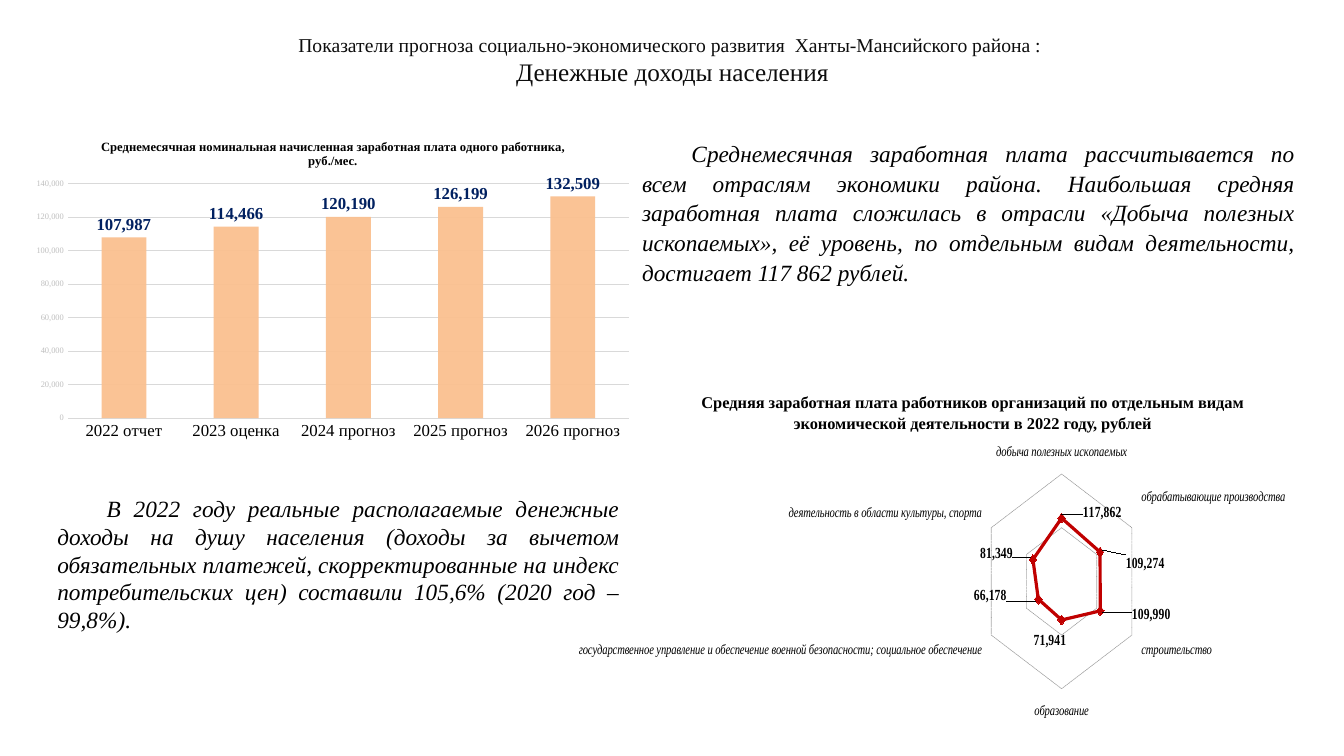
from lxml import etree
from pptx import Presentation
from pptx.chart.data import CategoryChartData
from pptx.dml.color import RGBColor
from pptx.enum import chart as ch, dml, text
from pptx.oxml import ns
from pptx.util import Inches, Pt

SERIF = "Times New Roman"
COLORS = {"black": "000000", "title": "0D0D0D", "bar": "FAC090", "radar": "C00000",
          "value": "002060", "scale": "BFBFBF", "grid": "D9D9D9", "ring": "7F7F7F"}
WAGES = {"2022 отчет": 107987, "2023 оценка": 114466, "2024 прогноз": 120190,
         "2025 прогноз": 126199, "2026 прогноз": 132509}
INDUSTRIES = {
    "добыча полезных ископаемых": 117862,
    "обрабатывающие производства\n": 109274,
    "строительство": 109990,
    "образование": 71941,
    "государственное управление и обеспечение военной безопасности; "
    "социальное обеспечение": 66178,
    "деятельность в области культуры, спорта": 81349}
LABEL_SHIFTS = [(0.07, 0.03), (0.04, 0.06), (0.05, -0.02),
                (-0.02, 0.01), (-0.05, -0.04), (-0.03, 0.01)]


def rgb(name):
    """Return the palette colour called name."""
    return RGBColor.from_string(COLORS[name])


def set_font(font, size, color="black", bold=False, italic=False, name=SERIF):
    """Format a font of a run or a chart part."""
    font.size, font.name, font.bold, font.italic = Pt(size), name, bold, italic
    font.color.rgb = rgb(color)


def add_text(slide, words, box, size, align, indent=0, spacing=1.0, **style):
    """Add a wrapped one-paragraph text box."""
    frame = slide.shapes.add_textbox(*map(Inches, box)).text_frame
    frame.word_wrap = True
    frame.auto_size = text.MSO_AUTO_SIZE.SHAPE_TO_FIT_TEXT
    paragraph = frame.paragraphs[0]
    paragraph.alignment, paragraph.line_spacing = align, spacing
    if indent:
        paragraph._p.get_or_add_pPr().set("indent", str(Inches(indent)))
    run = paragraph.add_run()
    run.text = words
    set_font(run.font, size, **style)


def fill_title(slide):
    """Place the title and write its two lines."""
    title = slide.shapes.title
    title.left, title.top, title.width, title.height = map(Inches, (0.16, 0.29, 13.02, 0.6))
    frame = title.text_frame
    frame.word_wrap = True
    frame.auto_size = text.MSO_AUTO_SIZE.NONE
    frame.vertical_anchor = text.MSO_ANCHOR.MIDDLE
    heading = frame.paragraphs[0]
    heading.alignment = text.PP_ALIGN.CENTER
    heading.line_spacing = 1.0
    topic = heading.add_run()
    topic.text = "Показатели прогноза социально-экономического развития  Ханты-Мансийского района : "
    heading.add_line_break()
    subject = heading.add_run()
    subject.text = "Денежные доходы населения"
    set_font(topic.font, 14, "title")
    set_font(subject.font, 18, "title")


def add_values_chart(slide, kind, box, values, label_size, label_color):
    """Add a one-series chart with bold value labels."""
    data = CategoryChartData(number_format="#,##0")
    data.categories = list(values)
    data.add_series("Series 1", list(values.values()))
    chart = slide.shapes.add_chart(kind, *map(Inches, box), data).chart
    set_font(chart.font, 10, name="Calibri")
    chart.has_legend = chart.has_title = False
    plot = chart.plots[0]
    plot.vary_by_categories = False
    labels = plot.series[0].data_labels
    labels.show_value = True
    labels.number_format, labels.number_format_is_linked = "#,##0", False
    set_font(labels.font, label_size, label_color, bold=True)
    return chart


def manual_layout(**settings):
    """Build a manual chart layout element."""
    layout = etree.Element(ns.qn("c:layout"))
    manual = etree.SubElement(layout, ns.qn("c:manualLayout"))
    for key, value in settings.items():
        etree.SubElement(manual, ns.qn("c:" + key)).set("val", str(value))
    return layout


def add_wage_columns(slide):
    """Draw the monthly wage forecast."""
    chart = add_values_chart(slide, ch.XL_CHART_TYPE.COLUMN_CLUSTERED,
                             (0.24, 1.23, 6.12, 3.2), WAGES, 12, "value")
    chart.has_title = True
    caption = chart.chart_title.text_frame.paragraphs[0].add_run()
    caption.text = ("Среднемесячная номинальная начисленная заработная плата "
                    "одного работника, руб./мес.")
    set_font(caption.font, 9, bold=True)
    plot = chart.plots[0]
    plot.gap_width = 150
    plot.series[0].data_labels.position = ch.XL_LABEL_POSITION.OUTSIDE_END
    fill = plot.series[0].format.fill
    fill.solid()
    fill.fore_color.rgb = rgb("bar")
    for color in plot.series[0]._element.xpath("./c:spPr/a:solidFill/a:srgbClr"):
        etree.SubElement(color, ns.qn("a:alpha")).set("val", "95000")
    years, scale = chart.category_axis, chart.value_axis
    for axis, size, color in ((years, 12, "black"), (scale, 6, "scale")):
        axis.major_tick_mark = axis.minor_tick_mark = ch.XL_TICK_MARK.NONE
        axis.format.line.fill.background()
        set_font(axis.tick_labels.font, size, color)
    scale.minimum_scale, scale.maximum_scale, scale.major_unit = 0, 140000, 20000
    scale.tick_labels.number_format = "#,##0"
    scale.tick_labels.number_format_is_linked = False
    grid = scale.major_gridlines.format.line
    grid.color.rgb, grid.width = rgb("grid"), Pt(0.75)


def add_industry_radar(slide):
    """Draw the wages by industry."""
    chart = add_values_chart(slide, ch.XL_CHART_TYPE.RADAR_MARKERS,
                             (5.74, 3.83, 7.61, 3.59), INDUSTRIES, 11, "black")
    wages = chart.plots[0].series[0]
    wages.smooth = False
    wages.format.line.color.rgb, wages.format.line.width = rgb("radar"), Pt(3)
    wages.marker.style, wages.marker.size = ch.XL_MARKER_STYLE.DIAMOND, 7
    wages.marker.format.fill.solid()
    wages.marker.format.fill.fore_color.rgb = rgb("radar")
    wages.marker.format.line.color.rgb = rgb("radar")
    for index in range(len(LABEL_SHIFTS)):
        set_font(wages.points[index].data_label.font, 11, bold=True)
    for label, (x, y) in zip(wages._element.xpath(".//c:dLbl"), LABEL_SHIFTS):
        number = etree.Element(ns.qn("c:numFmt"), formatCode="#,##0", sourceLinked="0")
        label.insert(1, manual_layout(x=x, y=y))
        label.insert(2, number)
    set_font(chart.category_axis.tick_labels.font, 10, italic=True)
    scale = chart.value_axis
    scale.minimum_scale, scale.maximum_scale, scale.major_unit = 0, 200000, 100000
    scale.has_major_gridlines = True
    rings = scale.major_gridlines.format.line
    rings.color.rgb, rings.width = rgb("ring"), Pt(0.5)
    rings.dash_style = dml.MSO_LINE.ROUND_DOT
    scale.visible = False
    area = chart._chartSpace.xpath("./c:chart/c:plotArea")[0]
    for automatic in area.xpath("./c:layout"):
        area.remove(automatic)
    area.insert(0, manual_layout(layoutTarget="inner", xMode="edge", yMode="edge",
                                 x=0.37, y=0.24, w=0.28, h=0.6))


def main():
    """Build and save the slide."""
    deck = Presentation()
    deck.slide_width, deck.slide_height = Inches(13.33), Inches(7.5)
    slide = deck.slides.add_slide(deck.slide_layouts[5])
    fill_title(slide)
    add_industry_radar(slide)
    add_text(slide, "Среднемесячная заработная плата рассчитывается по всем отраслям экономики "
             "района. Наибольшая средняя заработная плата сложилась в отрасли «Добыча полезных "
             "ископаемых», её уровень, по отдельным видам деятельности, достигает 117 862 рублей.",
             (6.27, 1.31, 6.67, 1.54), 16.67, text.PP_ALIGN.JUSTIFY,
             indent=0.49, spacing=1.07, italic=True)
    add_text(slide, "В 2022 году реальные располагаемые денежные доходы на душу населения "
             "(доходы за вычетом обязательных платежей, скорректированные на индекс "
             "потребительских цен) составили 105,6% (2020 год – 99,8%).",
             (0.47, 4.85, 5.77, 1.45), 16.67, text.PP_ALIGN.JUSTIFY, indent=0.49, italic=True)
    add_text(slide, "Средняя заработная плата работников организаций по отдельным видам "
             "экономической деятельности в 2022 году, рублей",
             (6.31, 3.83, 6.67, 0.5), 11.67, text.PP_ALIGN.CENTER, spacing=1.07, bold=True)
    add_wage_columns(slide)
    deck.save("out.pptx")


if __name__ == "__main__":
    main()
